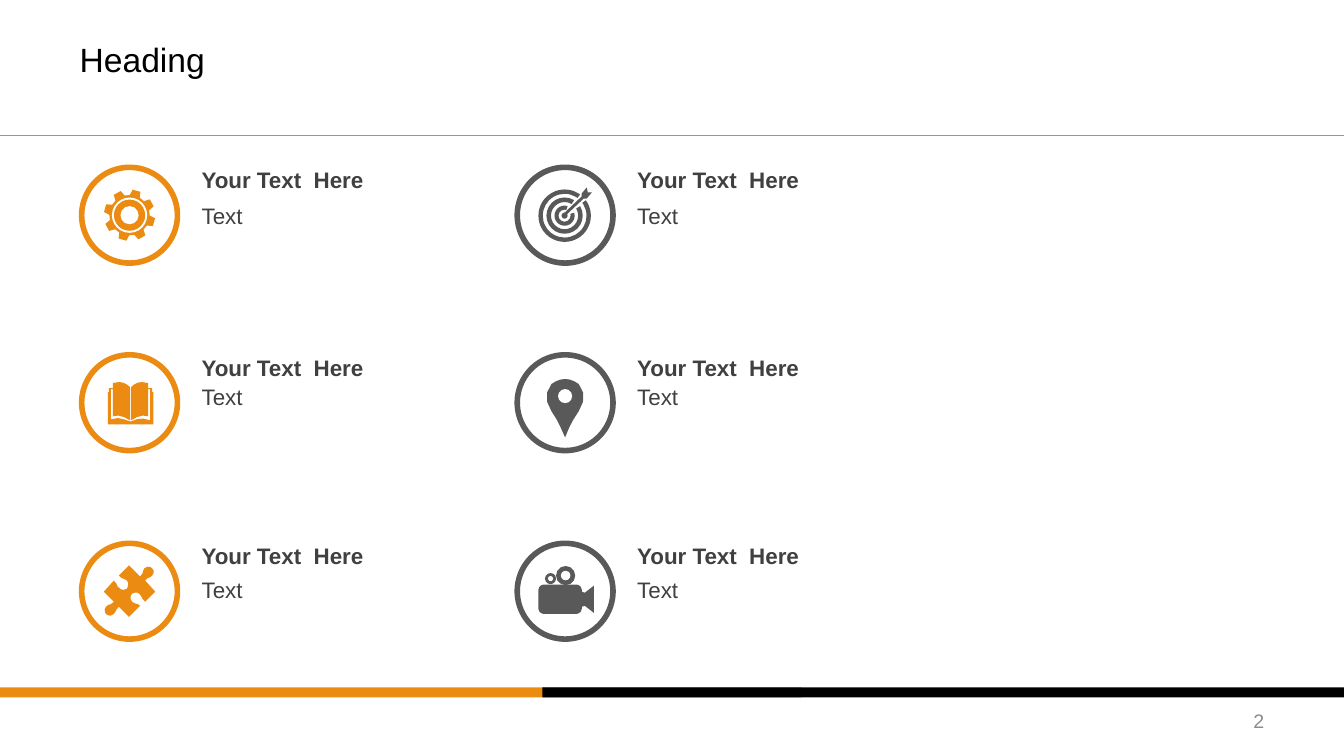
from dataclasses import dataclass
from math import asin, cos, degrees, radians, sin

from lxml import etree
from pptx import Presentation
from pptx.dml.color import RGBColor
from pptx.enum.shapes import MSO_CONNECTOR, MSO_SHAPE
from pptx.enum.text import MSO_ANCHOR, MSO_AUTO_SIZE, PP_ALIGN
from pptx.oxml.ns import qn
from pptx.util import Inches, Pt

OVAL = MSO_SHAPE.OVAL
BLOCK_ARC = MSO_SHAPE.BLOCK_ARC
RECTANGLE = MSO_SHAPE.RECTANGLE
STRAIGHT = MSO_CONNECTOR.STRAIGHT
MIDDLE = MSO_ANCHOR.MIDDLE
GROW = MSO_AUTO_SIZE.SHAPE_TO_FIT_TEXT
FIXED = MSO_AUTO_SIZE.NONE
LEFT, RIGHT = PP_ALIGN.LEFT, PP_ALIGN.RIGHT


@dataclass(frozen=True)
class Theme:
    font: str = "Arial"
    orange: str = "EB8B11"
    gray: str = "595959"
    black: str = "000000"
    white: str = "FFFFFF"
    text: str = "404040"
    number: str = "8C8C8C"
    rule: str = "969696"
    title_size: int = 24
    body_size: int = 16
    number_size: int = 14


THEME = Theme()
BADGE_SIZE = 0.95
BADGE_LEFTS = (0.81, 5.13)
ROWS = ((1.66, 2.0), (3.52, 3.8), (5.39, 5.71))  # badge top, body text top

# Icon outlines, in hundredths of an inch from the corner of the badge
PUZZLE = """M 70 25 C 72 26 72 30 70 32 C 68 35 65 33 63 37 L 73 48 L 63 58
C 59 55 60 52 57 50 C 55 48 52 49 50 50 C 48 52 48 56 50 58 C 54 61 55 59 58 62
L 47 73 L 37 63 C 33 66 35 67 32 70 C 29 73 26 72 24 70 C 23 69 22 65 24 63
C 26 60 29 62 32 58 L 22 48 L 32 37 C 36 40 34 43 38 45 C 40 47 43 46 45 45
C 46 43 47 39 45 37 C 41 34 40 36 37 32 L 47 22 L 58 33 C 62 29 60 28 62 25
C 65 22 69 23 70 25"""
BOOK = """M 48 66 L 49 66 C 56 63 60 62 68 65 L 68 34 L 66 34 L 66 61
C 61 59 55 61 49 65 L 49 32 C 52 29 55 27 60 27 L 66 28 L 66 33
L 70 33 L 70 37 L 71 37 L 71 69 L 26 69 L 26 37 L 27 37 L 27 33 L 31 33 L 31 28
L 37 27 C 41 27 45 29 48 32 L 48 65 C 42 61 36 59 31 61 L 31 34
L 29 34 L 29 64 C 37 61 41 64 48 66"""
PIN = """M 47.5 24 C 52 24 57 26 61 29 C 68 37 67 47 61 56 C 55 65 52 70 47.5 82
C 42 70 41 66 34 56 C 28 47 27 37 34 29 C 38 26 43 24 47.5 24"""
CAMERA = """M 26 41 L 59 41 C 61 41 64 43 64 46 L 64 48 L 67 49
L 76 42 L 76 69 L 67 62 L 64 63 L 64 65 C 64 68 61 70 59 70
L 26 70 C 24 70 21 68 21 65 L 21 46 C 21 43 24 41 26 41"""
ARROW = "M 69 20 L 70 25 L 74 25 L 69 31 L 66 31 L 49 47 L 47 45 L 64 29 L 64 26"


# Outline geometry
def outline(commands, steps=3):
    """Turn move, line and cubic curve commands into a list of points."""
    tokens = iter(commands.split())
    points = []
    for command in tokens:
        pairs = [(float(next(tokens)), float(next(tokens)))
                 for _ in range(3 if command == "C" else 1)]
        if command == "C":
            controls = [points[-1], *pairs]
            for step in range(1, steps + 1):
                t = step / steps
                weights = ((1 - t) ** 3, 3 * t * (1 - t) ** 2, 3 * t * t * (1 - t), t ** 3)
                points.append(tuple(sum(w * control[axis] for w, control in zip(weights, controls))
                                    for axis in (0, 1)))
        else:
            points.extend(pairs)
    return points


def gear_teeth():
    angles = [(radius, radians(16 + 45 * tooth + turn))
              for tooth in range(8)
              for radius, turn in ((20, -15), (25.5, -9), (25.5, 9), (20, 15))]
    return [(47.5 + radius * cos(angle), 47.5 + radius * sin(angle))
            for radius, angle in angles]


# Slide elements
def add_text(slide, text, left, top, width, height, *, size, color, bold=False,
             align=LEFT, inset=(0, 0), fit=FIXED):
    frame = slide.shapes.add_textbox(Inches(left), Inches(top), Inches(width),
                                     Inches(height)).text_frame
    frame.word_wrap = True
    frame.auto_size = fit
    frame.vertical_anchor = MIDDLE
    frame.margin_left = frame.margin_right = Inches(inset[0])
    frame.margin_top = frame.margin_bottom = Inches(inset[1])
    paragraph = frame.paragraphs[0]
    paragraph.alignment = align
    run = paragraph.add_run()
    run.text = text
    run.font.name = THEME.font
    run.font.size = Pt(size)
    run.font.bold = bold
    run.font.color.rgb = RGBColor.from_string(color)


def add_filled(slide, kind, left, top, width, height, color):
    shape = slide.shapes.add_shape(kind, Inches(left), Inches(top), Inches(width), Inches(height))
    paint(shape, color)
    return shape


def paint(shape, color):
    shape.shadow.inherit = False
    shape.fill.solid()
    shape.fill.fore_color.rgb = RGBColor.from_string(color)
    shape.line.fill.background()


def add_rule(slide, top, color):
    rule = slide.shapes.add_connector(STRAIGHT, 0, Inches(top), Inches(13.33), Inches(top))
    rule.line.color.rgb = RGBColor.from_string(color)
    rule.line.width = Pt(0.75)
    etree.SubElement(rule._element.spPr, qn("a:effectLst"))


def add_badge(slide, left, top, color):
    ring = slide.shapes.add_shape(OVAL, Inches(left), Inches(top),
                                  Inches(BADGE_SIZE), Inches(BADGE_SIZE))
    ring.shadow.inherit = False
    ring.fill.background()
    ring.line.color.rgb = RGBColor.from_string(color)
    ring.line.width = Pt(4)


def add_icon(slide, left, top, color, points, discs=()):
    """Draw an outline, then discs given as center x, center y, radius, color."""
    placed = [(Inches(left + x / 100), Inches(top + y / 100)) for x, y in points]
    builder = slide.shapes.build_freeform(*placed[0])
    builder.add_line_segments(placed[1:], close=True)
    paint(builder.convert_to_shape(), color)
    for x, y, radius, disc_color in discs:
        add_filled(slide, OVAL, left + (x - radius) / 100, top + (y - radius) / 100,
                   radius / 50, radius / 50, disc_color)


def add_target_rings(slide, left, top, color):
    """Draw three rings, each open to the upper right for the arrow."""
    for outer, inner in ((26, 21.7), (18, 13.5), (10, 6)):
        ring = add_filled(slide, BLOCK_ARC, left + (47 - outer) / 100, top + (48 - outer) / 100,
                          outer / 50, outer / 50, color)
        gap = degrees(asin(3.7 * 2 / (outer + inner)))
        ring.adjustments[0] = (315 + gap) * 0.6
        ring.adjustments[1] = (315 - gap) * 0.6
        ring.adjustments[2] = (outer - inner) / (2 * outer)


def main():
    presentation = Presentation()
    presentation.slide_width, presentation.slide_height = Inches(13.33), Inches(7.5)
    slide = presentation.slides.add_slide(presentation.slide_layouts[6])

    # Frame of the slide
    for left, color in ((0, THEME.orange), (5.38, THEME.black)):
        add_filled(slide, RECTANGLE, left, 6.82, 7.95, 0.1, color)
    add_rule(slide, 1.34, THEME.rule)
    add_text(slide, "2", 9.55, 6.95, 3.11, 0.4, size=THEME.number_size,
             color=THEME.number, align=RIGHT, inset=(0.12, 0.06))
    add_text(slide, "Heading", 0.67, 0.13, 12, 0.91, size=THEME.title_size,
             color=THEME.black, inset=(0.12, 0.06))

    # Two columns of badges with their captions
    orange, gray, white = THEME.orange, THEME.gray, THEME.white
    gear_discs = [(47.5, 47.5, 17.5, white), (47.5, 47.5, 15.5, orange), (47.5, 47.5, 9, white)]
    reels = [(33, 35, 5.5, gray), (33, 35, 2.5, white), (48, 32, 9.5, gray), (48, 32, 4.7, white)]
    columns = (
        (orange, ((gear_teeth(), gear_discs), (outline(BOOK), ()), (outline(PUZZLE), ()))),
        (gray, ((outline(ARROW), [(47, 48, 3, gray)]),
                (outline(PIN), [(47.5, 41, 7, white)]),
                (outline(CAMERA), reels))),
    )
    for left, (color, icons) in zip(BADGE_LEFTS, columns):
        for (top, body_top), (points, discs) in zip(ROWS, icons):
            add_badge(slide, left, top, color)
            add_icon(slide, left, top, color, points, discs)
            for text, text_top, bold in (("Your Text  Here", top - 0.01, True),
                                         ("Text", body_top, False)):
                add_text(slide, text, left + 1.19, text_top, 2.84, 0.27,
                         size=THEME.body_size, color=THEME.text, bold=bold, fit=GROW)
    add_target_rings(slide, BADGE_LEFTS[1], ROWS[0][0], gray)

    presentation.save("out.pptx")


if __name__ == "__main__":
    main()
